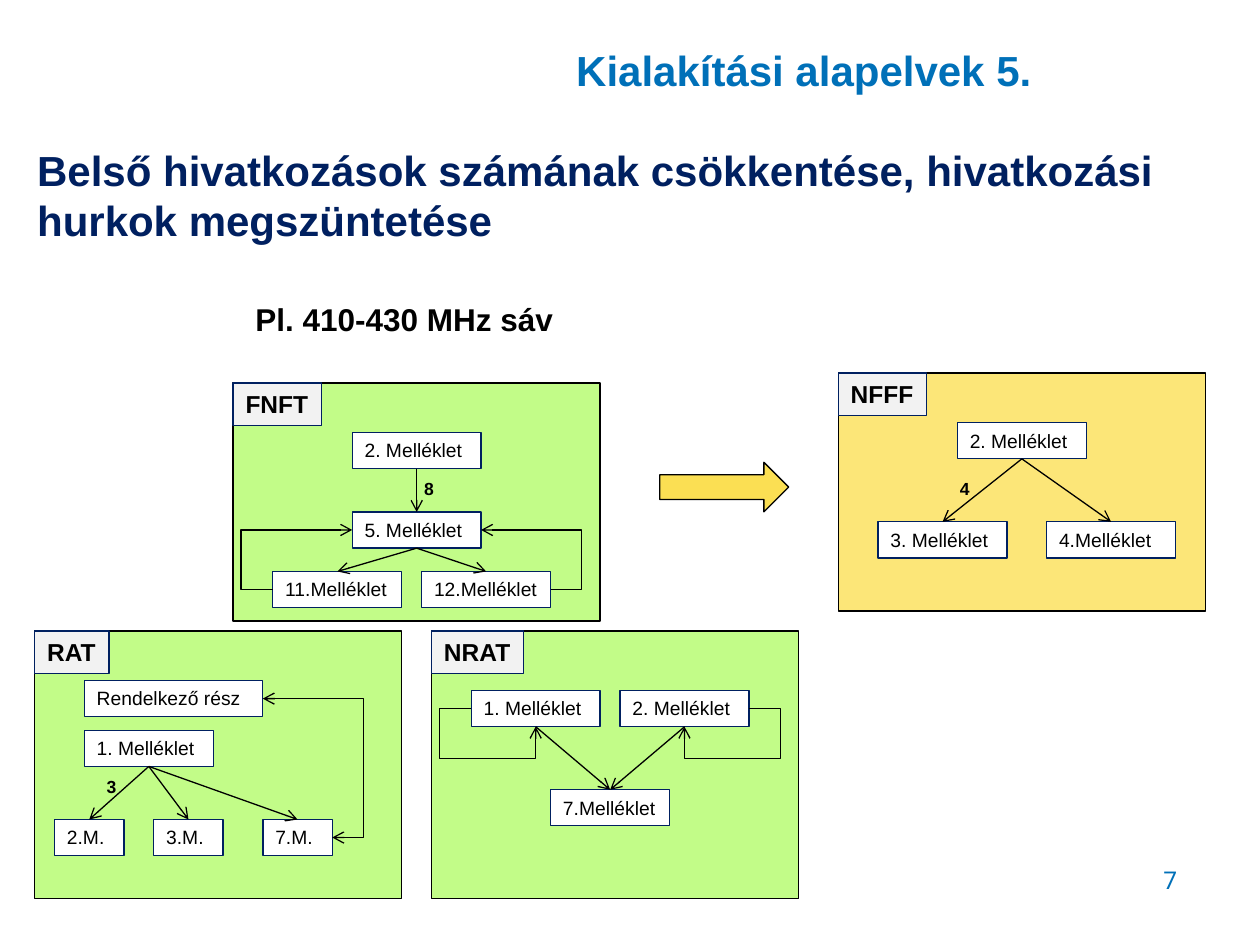
"""Build the slide on reducing internal references between band regulations."""
from dataclasses import dataclass
from typing import NamedTuple

from lxml import etree
from pptx import Presentation
from pptx.dml.color import RGBColor
from pptx.enum.shapes import MSO_CONNECTOR, MSO_SHAPE
from pptx.enum.text import MSO_ANCHOR, PP_ALIGN
from pptx.oxml.ns import qn
from pptx.shapes.autoshape import Shape
from pptx.slide import Slide
from pptx.util import Cm, Pt

RECTANGLE, RIGHT_ARROW = MSO_SHAPE.RECTANGLE, MSO_SHAPE.RIGHT_ARROW
STRAIGHT, ELBOW = MSO_CONNECTOR.STRAIGHT, MSO_CONNECTOR.ELBOW
LEFT, CENTER, RIGHT = PP_ALIGN.LEFT, PP_ALIGN.CENTER, PP_ALIGN.RIGHT
ANCHOR_TOP, ANCHOR_MIDDLE = MSO_ANCHOR.TOP, MSO_ANCHOR.MIDDLE
TOP_SIDE, LEFT_SIDE, BOTTOM_SIDE, RIGHT_SIDE = range(4)


@dataclass(frozen=True)
class Theme:
    font: str = "Arial"
    number_font: str = "Roboto"
    black: str = "000000"
    white: str = "FFFFFF"
    navy: str = "002060"
    blue: str = "0070B8"
    green: str = "C2FC88"
    yellow: str = "FCE678"
    gold: str = "FBDF53"
    grey: str = "F2F2F2"
    title_size: int = 24
    example_size: int = 18
    tag_size: int = 14
    box_size: int = 11
    count_size: int = 10
    line_width: float = 0.75


THEME = Theme()


class Area(NamedTuple):
    left: float
    top: float
    width: float
    height: float


class Style(NamedTuple):
    size: int
    color: str = THEME.black
    bold: bool = True
    font: str = THEME.font
    align: PP_ALIGN = LEFT
    anchor: MSO_ANCHOR = ANCHOR_TOP
    wrap: bool = True


class Box(NamedTuple):
    text: str
    left: float
    top: float
    width: float = 2.6


class Link(NamedTuple):
    begin: str
    end: str
    begin_side: int = BOTTOM_SIDE
    end_side: int = TOP_SIDE
    bends: tuple[float, ...] = ()
    two_way: bool = False


class Panel(NamedTuple):
    name: str
    area: Area
    fill: str
    tag_width: float
    boxes: list[Box]
    links: list[Link]
    count: Box | None = None


TAG_HEIGHT, BOX_HEIGHT, COUNT_SIDE = 0.86, 0.73, 0.7
TAG_STYLE = Style(THEME.tag_size, wrap=False)
BOX_STYLE = Style(THEME.box_size, bold=False)
COUNT_STYLE = Style(THEME.count_size, wrap=False)

PANELS = [
    Panel("FNFT", Area(4.7, 7.72, 7.4, 4.8), THEME.green, 1.78,
          [Box("2. Melléklet", 2.4, 1), Box("5. Melléklet", 2.4, 2.6),
           Box("11.Melléklet", 0.8, 3.8), Box("12.Melléklet", 3.8, 3.8)],
          [Link("2. Melléklet", "5. Melléklet"),
           Link("5. Melléklet", "11.Melléklet"),
           Link("5. Melléklet", "12.Melléklet"),
           Link("12.Melléklet", "5. Melléklet", RIGHT_SIDE, RIGHT_SIDE, (-0.45,)),
           Link("11.Melléklet", "5. Melléklet", LEFT_SIDE, LEFT_SIDE, (-0.4,))],
          Box("8", 3.6, 1.8, COUNT_SIDE)),
    Panel("RAT", Area(0.7, 12.72, 7.4, 5.4), THEME.green, 1.5,
          [Box("1. Melléklet", 1, 2), Box("Rendelkező rész", 1, 1, 3.6),
           Box("2.M.", 0.4, 3.8, 1.4), Box("3.M.", 2.4, 3.8, 1.4),
           Box("7.M.", 4.6, 3.8, 1.4)],
          [Link("1. Melléklet", "2.M."), Link("1. Melléklet", "3.M."),
           Link("1. Melléklet", "7.M."),
           Link("7.M.", "Rendelkező rész", RIGHT_SIDE, RIGHT_SIDE, (-0.45,), True)],
          Box("3", 1.2, 2.8, COUNT_SIDE)),
    Panel("NRAT", Area(8.7, 12.72, 7.4, 5.4), THEME.green, 1.86,
          [Box("1. Melléklet", 0.8, 1.2), Box("2. Melléklet", 3.8, 1.2),
           Box("7.Melléklet", 2.4, 3.2, 2.4)],
          [Link("1. Melléklet", "7.Melléklet"), Link("2. Melléklet", "7.Melléklet"),
           Link("2. Melléklet", "2. Melléklet", RIGHT_SIDE, BOTTOM_SIDE, (-0.49, 2.75)),
           Link("1. Melléklet", "1. Melléklet", LEFT_SIDE, BOTTOM_SIDE, (-0.49, 2.75))]),
    Panel("NFFF", Area(16.9, 7.52, 7.4, 4.8), THEME.yellow, 1.78,
          [Box("2. Melléklet", 2.4, 1), Box("3. Melléklet", 0.8, 3),
           Box("4.Melléklet", 4.2, 3)],
          [Link("2. Melléklet", "3. Melléklet"), Link("2. Melléklet", "4.Melléklet")],
          Box("4", 2.2, 2, COUNT_SIDE)),
]


def write_text(shape: Shape, text: str, style: Style) -> None:
    frame = shape.text_frame
    frame.word_wrap = style.wrap
    frame.vertical_anchor = style.anchor
    paragraph = frame.paragraphs[0]
    paragraph.text = text
    paragraph.alignment = style.align
    paragraph.font.name = style.font
    paragraph.font.size = Pt(style.size)
    paragraph.font.bold = style.bold
    paragraph.font.color.rgb = RGBColor.from_string(style.color)


def add_text(slide: Slide, area: Area, text: str, style: Style) -> None:
    write_text(slide.shapes.add_textbox(*map(Cm, area)), text, style)


def add_block(slide: Slide, area: Area, fill: str, line: str = THEME.black,
              kind: MSO_SHAPE = RECTANGLE) -> Shape:
    shape = slide.shapes.add_shape(kind, *map(Cm, area))
    shape.shadow.inherit = False
    shape.fill.solid()
    shape.fill.fore_color.rgb = RGBColor.from_string(fill)
    shape.line.color.rgb = RGBColor.from_string(line)
    shape.line.width = Pt(THEME.line_width)
    return shape


def add_link(slide: Slide, link: Link, boxes: dict[str, Shape]) -> None:
    connector = slide.shapes.add_connector(ELBOW if link.bends else STRAIGHT, 0, 0, 0, 0)
    connector.begin_connect(boxes[link.begin], link.begin_side)
    connector.end_connect(boxes[link.end], link.end_side)
    connector.line.color.rgb = RGBColor.from_string(THEME.black)
    connector.line.width = Pt(THEME.line_width)
    properties = connector._element.spPr
    outline = properties.find(qn("a:ln"))
    for end in ("a:headEnd", "a:tailEnd") if link.two_way else ("a:tailEnd",):
        etree.SubElement(outline, qn(end), type="arrow")
    etree.SubElement(properties, qn("a:effectLst"))
    if link.bends:
        geometry = properties.find(qn("a:prstGeom"))
        geometry.set("prst", f"bentConnector{len(link.bends) + 2}")
        adjustments = geometry.find(qn("a:avLst"))
        for number, bend in enumerate(link.bends, 1):
            etree.SubElement(adjustments, qn("a:gd"), name=f"adj{number}",
                             fmla=f"val {round(bend * 100000)}")


def add_panel(slide: Slide, panel: Panel) -> None:
    left, top = panel.area[:2]
    add_block(slide, panel.area, panel.fill)
    tag = add_block(slide, Area(left, top, panel.tag_width, TAG_HEIGHT), THEME.grey, THEME.navy)
    write_text(tag, panel.name, TAG_STYLE)
    shapes = {}
    for box in panel.boxes:
        area = Area(left + box.left, top + box.top, box.width, BOX_HEIGHT)
        shapes[box.text] = add_block(slide, area, THEME.white, THEME.navy)
        write_text(shapes[box.text], box.text, BOX_STYLE)
    for link in panel.links:
        add_link(slide, link, shapes)
    if panel.count:
        count = panel.count
        area = Area(left + count.left, top + count.top, count.width, COUNT_SIDE)
        add_text(slide, area, count.text, COUNT_STYLE)


def main() -> None:
    presentation = Presentation()
    presentation.slide_width, presentation.slide_height = Cm(25.4), Cm(19.05)
    slide = presentation.slides.add_slide(presentation.slide_layouts[6])
    add_text(slide, Area(0.5, 2.51, 24.2, 2.82),
             "Belső hivatkozások számának csökkentése, hivatkozási hurkok megszüntetése",
             Style(THEME.title_size, THEME.navy, anchor=ANCHOR_MIDDLE))
    add_text(slide, Area(18.06, 17.32, 5.92, 1.32), "7",
             Style(THEME.tag_size, THEME.blue, False, THEME.number_font, RIGHT))
    add_text(slide, Area(8.13, 0.61, 16.15, 1.6), "Kialakítási alapelvek 5.",
             Style(THEME.title_size, THEME.blue, align=CENTER, anchor=ANCHOR_MIDDLE))
    add_text(slide, Area(4.9, 5.92, 6.58, 1.02), "Pl. 410-430 MHz sáv",
             Style(THEME.example_size, wrap=False))
    for panel in PANELS:
        add_panel(slide, panel)
    add_block(slide, Area(13.3, 9.32, 2.6, 1), THEME.gold, kind=RIGHT_ARROW)
    presentation.save("out.pptx")


if __name__ == "__main__":
    main()
